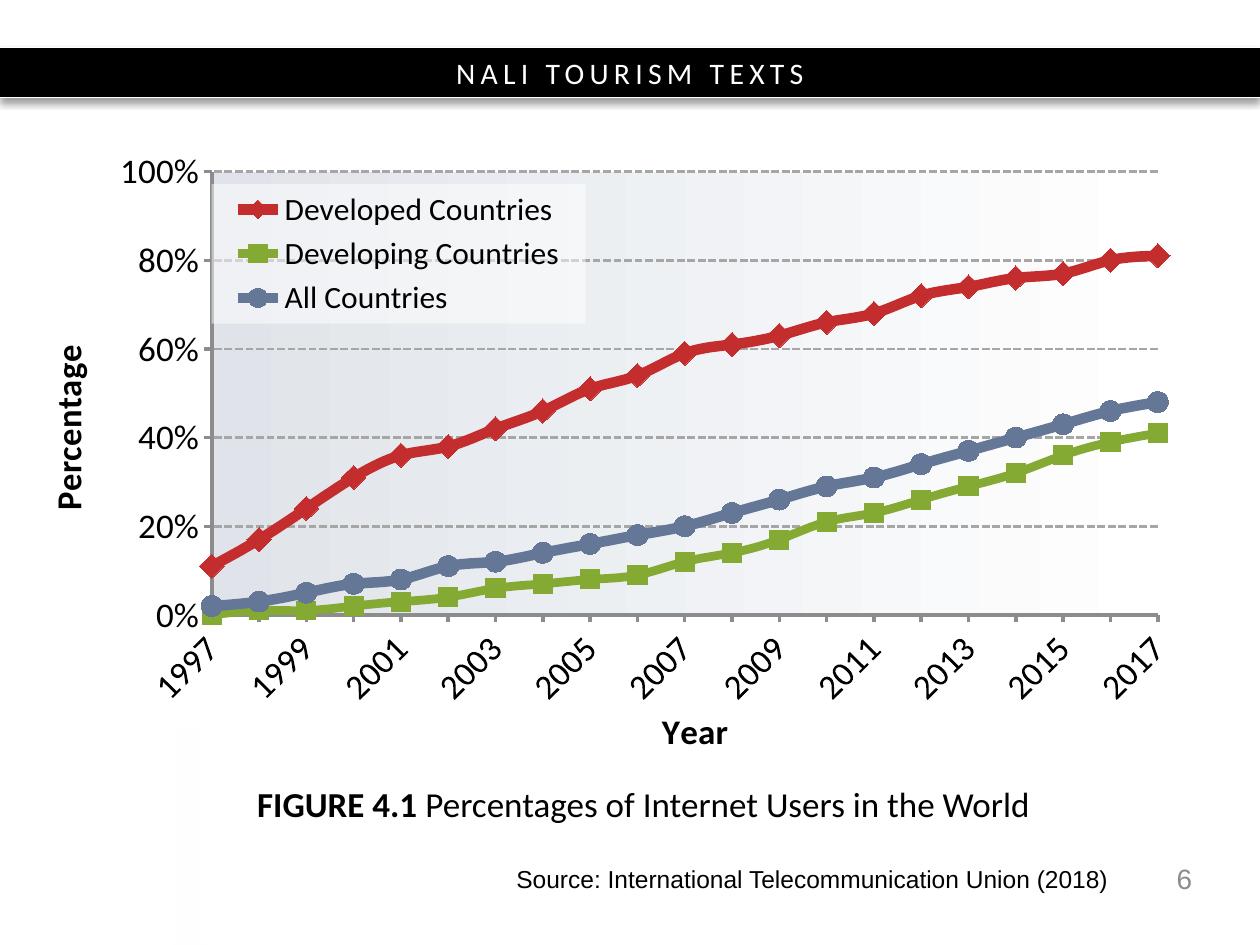
from dataclasses import dataclass

from lxml import etree
from pptx import Presentation
from pptx import util as u
from pptx.chart.data import CategoryChartData
from pptx.dml.color import RGBColor
from pptx.enum import chart as ch
from pptx.enum import dml, shapes, text
from pptx.oxml import parse_xml
from pptx.oxml.ns import nsdecls, qn


@dataclass(frozen=True)
class Theme:
    black: str = "000000"
    white: str = "FFFFFF"
    grey: str = "8C8C8C"
    grid: str = "A6A6A6"
    tint: str = "E0E4EA"
    body: str = "Calibri"
    note: str = "Arial"
    large: int = 20
    legend: int = 18
    band: int = 17
    number: int = 16
    source: int = 14


T = Theme()
W, H = u.Inches(10), u.Inches(7.5)
NS = nsdecls("c", "a")
YEARS = [str(y) for y in range(1997, 2018)]
# name, colour, line width, marker, marker size, percentages
SERIES = [
    ("Developed Countries", "C32D2E", 6, ch.XL_MARKER_STYLE.DIAMOND, 14,
     [11, 17, 24, 31, 36, 38, 42, 46, 51, 54, 59,
      61, 63, 66, 68, 72, 74, 76, 77, 80, 81]),
    ("Developing Countries", "84AA33", 5, ch.XL_MARKER_STYLE.SQUARE, 11,
     [0, 1, 1, 2, 3, 4, 6, 7, 8, 9, 12,
      14, 17, 21, 23, 26, 29, 32, 36, 39, 41]),
    ("All Countries", "657797", 6, ch.XL_MARKER_STYLE.CIRCLE, 12,
     [2, 3, 5, 7, 8, 11, 12, 14, 16, 18, 20,
      23, 26, 29, 31, 34, 37, 40, 43, 46, 48]),
]


def rgb(code):
    return RGBColor.from_string(code)


def box(*inches):
    """Turn left, top, width and height in inches into slide lengths."""
    return tuple(u.Inches(v) for v in inches)


def style(font, size, color=T.black, name=T.body, bold=False):
    font.size, font.name, font.bold = u.Pt(size), name, bold
    font.color.rgb = rgb(color)


def add_run(p, words, size, **look):
    r = p.add_run()
    r.text = words
    style(r.font, size, **look)
    return r


def add_band(slide, area, words):
    """Black band with a soft shadow and a white rule on each edge."""
    left, top, width, height = area
    sp = slide.shapes.add_shape(shapes.MSO_SHAPE.RECTANGLE, *area)
    sp.fill.solid()
    sp.fill.fore_color.rgb = rgb(T.black)
    sp.line.fill.background()
    sp._element.spPr.append(parse_xml(
        f'<a:effectLst {NS}><a:outerShdw blurRad="50800" dist="38100" '
        f'dir="5400000" rotWithShape="0"><a:srgbClr val="{T.black}">'
        '<a:alpha val="40000"/></a:srgbClr></a:outerShdw></a:effectLst>'))
    tf = sp.text_frame
    tf.vertical_anchor = text.MSO_ANCHOR.MIDDLE
    p = tf.paragraphs[0]
    p.alignment = text.PP_ALIGN.CENTER
    add_run(p, words, T.band, color=T.white).font._element.set("spc", "300")
    for y in (top, top + height):
        rule = slide.shapes.add_connector(
            shapes.MSO_CONNECTOR.STRAIGHT, left, y, left + width, y)
        rule.line.color.rgb = rgb(T.white)
        rule.line.width = u.Pt(0.75)
        etree.SubElement(rule._element.spPr, qn("a:effectLst"))


def add_fade(slide, area):
    """Pale strip at the foot, fading in from the left."""
    sp = slide.shapes.add_shape(shapes.MSO_SHAPE.RECTANGLE, *area)
    sp.shadow.inherit = False
    sp.line.fill.background()
    sp.fill.gradient()
    sp.fill.gradient_angle = 0
    for stop in sp.fill.gradient_stops:
        stop.color.rgb = rgb(T.white)
    first = sp._element.spPr.find(".//" + qn("a:srgbClr"))
    etree.SubElement(first, qn("a:alpha")).set("val", "0")


def add_caption(slide, area):
    sp = slide.shapes.title
    sp.left, sp.top, sp.width, sp.height = area
    sp.text_frame.vertical_anchor = text.MSO_ANCHOR.MIDDLE
    p = sp.text_frame.paragraphs[0]
    p.alignment = text.PP_ALIGN.CENTER
    p.line_spacing = u.Pt(32)
    add_run(p, "FIGURE 4.1 ", T.large, bold=True)
    add_run(p, "Percentages of Internet Users in the World ", T.large)


def add_note(slide, area, words, size, color, align, anchor):
    tf = slide.shapes.add_textbox(*area).text_frame
    tf.word_wrap = True
    tf.vertical_anchor = anchor
    p = tf.paragraphs[0]
    p.alignment = align
    add_run(p, words, size, color=color, name=T.note)


def set_layout(part, after=None, inner=False, **shares):
    """Place a chart part by shares of the chart's size."""
    for old in part.findall(qn("c:layout")):
        part.remove(old)
    target = '<c:layoutTarget val="inner"/>' if inner else ""
    sizes = "".join(f'<c:{k} val="{v}"/>' for k, v in shares.items())
    layout = parse_xml(
        f'<c:layout {NS}><c:manualLayout>{target}<c:xMode val="edge"/>'
        f'<c:yMode val="edge"/>{sizes}</c:manualLayout></c:layout>')
    if after:
        part.find(qn(after)).addnext(layout)
    else:
        part.insert(0, layout)


def format_axis(axis, title):
    axis.has_title = True
    p = axis.axis_title.text_frame.paragraphs[0]
    add_run(p, title, T.large, bold=True)
    axis.major_tick_mark = ch.XL_TICK_MARK.OUTSIDE
    axis.minor_tick_mark = ch.XL_TICK_MARK.NONE
    axis.format.line.color.rgb = rgb(T.grey)
    axis.format.line.width = u.Pt(2)
    style(axis.tick_labels.font, T.large)


def format_axes(chart):
    cat, val = chart.category_axis, chart.value_axis
    format_axis(cat, "Year")
    format_axis(val, "Percentage")
    # Every second year, slanted
    set_layout(cat.axis_title._element, after="c:tx", x=0.53, y=0.91)
    cat.has_major_gridlines = False
    cat._element.find(qn("c:txPr")).find(qn("a:bodyPr")).set("rot", "-2700000")
    cat._element.find(qn("c:noMultiLvlLbl")).addprevious(
        parse_xml(f'<c:tickLblSkip {NS} val="2"/>'))
    # Percentage scale with dashed gridlines
    val.minimum_scale, val.maximum_scale, val.major_unit = 0, 1, 0.2
    val.tick_labels.number_format = "0%"
    val.tick_labels.number_format_is_linked = False
    grid = val.major_gridlines.format.line
    grid.color.rgb = rgb(T.grid)
    grid.width = u.Pt(1.5)
    grid.dash_style = dml.MSO_LINE.SQUARE_DOT
    # Start the lines on the value axis
    for old in val._element.findall(qn("c:crossBetween")):
        val._element.remove(old)
    val._element.find(qn("c:crosses")).addnext(
        parse_xml(f'<c:crossBetween {NS} val="midCat"/>'))


def format_legend(chart):
    chart.has_legend = True
    chart.legend.position = ch.XL_LEGEND_POSITION.RIGHT
    chart.legend.include_in_layout = False
    style(chart.legend.font, T.legend)
    part = chart.legend._element
    set_layout(part, after="c:legendPos", x=0.15, y=0.06, w=0.32, h=0.23)
    part.find(qn("c:txPr")).addprevious(parse_xml(
        f'<c:spPr {NS}><a:solidFill><a:srgbClr val="{T.white}">'
        '<a:alpha val="50000"/></a:srgbClr></a:solidFill></c:spPr>'))


def add_usage_chart(slide, area):
    data = CategoryChartData(number_format="0%")
    data.categories = YEARS
    for name, *_, values in SERIES:
        data.add_series(name, [v / 100 for v in values])
    chart = slide.shapes.add_chart(ch.XL_CHART_TYPE.LINE_MARKERS, *area, data).chart
    chart.has_title = False
    style(chart.font, T.large)
    chart.plots[0].vary_by_categories = False
    for s, (_, color, width, marker, size, _) in zip(chart.plots[0].series, SERIES):
        s.smooth = True
        s.format.line.color.rgb = rgb(color)
        s.format.line.width = u.Pt(width)
        s.marker.style, s.marker.size = marker, size
        s.marker.format.fill.solid()
        s.marker.format.fill.fore_color.rgb = rgb(color)
        s.marker.format.line.color.rgb = rgb(T.white)
    format_axes(chart)
    format_legend(chart)
    # Plot area: fixed place, tint fading to the right
    plot = chart._chartSpace.chart.plotArea
    set_layout(plot, inner=True, x=0.15, y=0.04, w=0.81, h=0.73)
    plot.append(parse_xml(
        f'<c:spPr {NS}><a:gradFill><a:gsLst>'
        f'<a:gs pos="0"><a:srgbClr val="{T.white}"/></a:gs>'
        f'<a:gs pos="100000"><a:srgbClr val="{T.tint}"/></a:gs>'
        '</a:gsLst><a:lin ang="10800000" scaled="0"/></a:gradFill></c:spPr>'))


prs = Presentation()
prs.slide_width, prs.slide_height = W, H
slide = prs.slides.add_slide(prs.slide_layouts[5])
add_band(slide, (0, int(H * 0.05), W, u.Inches(0.4)), "NALI TOURISM TEXTS")
add_fade(slide, box(1.37, 5.75, 0.26, 1.75))
add_caption(slide, box(0.86, 6.08, 8.56, 0.48))
add_note(slide, box(7.23, 6.77, 2.33, 0.4), "6", T.number, T.grey,
         text.PP_ALIGN.RIGHT, text.MSO_ANCHOR.MIDDLE)
add_note(slide, box(4, 6.81, 5, 0.34),
         "Source: International Telecommunication Union (2018)",
         T.source, T.black, text.PP_ALIGN.LEFT, text.MSO_ANCHOR.TOP)
add_usage_chart(slide, box(0.29, 1.17, 9.27, 4.89))
prs.save("out.pptx")
